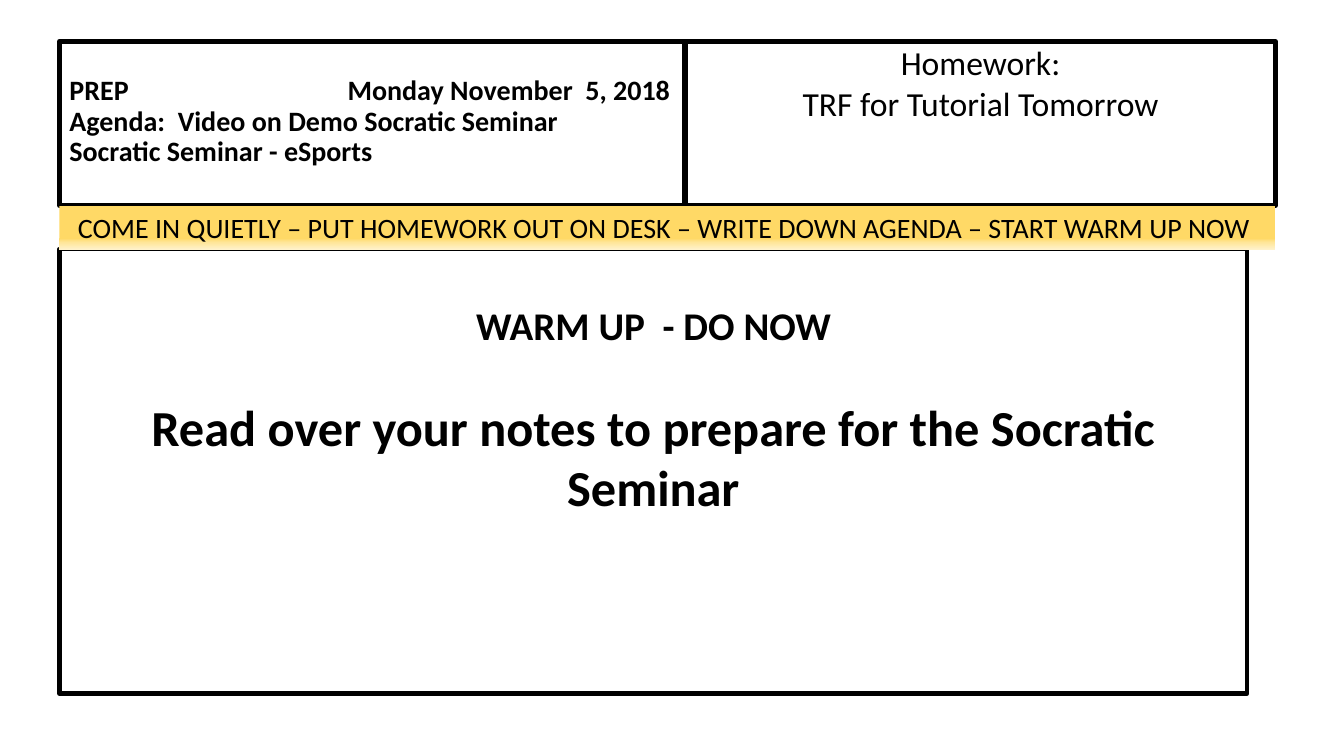
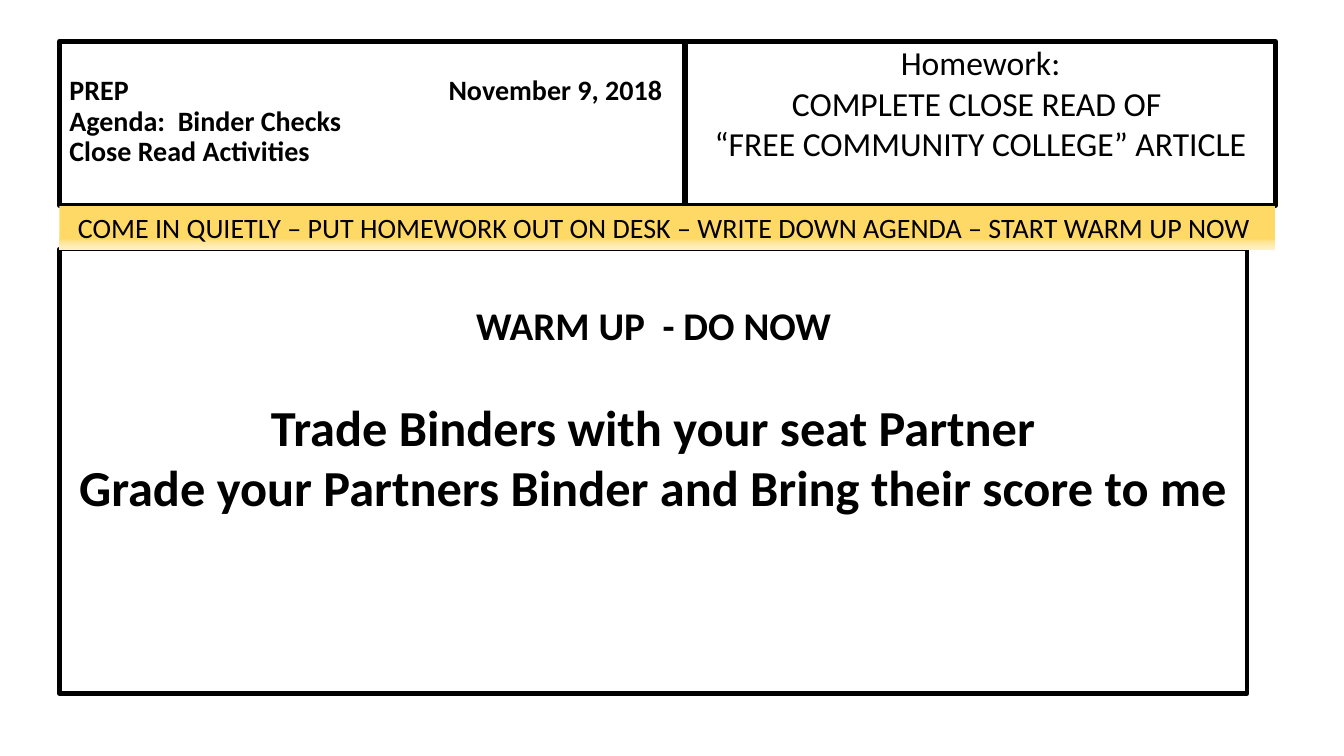
from lxml.etree import SubElement
from pptx import Presentation
from pptx.dml.color import RGBColor
from pptx.enum.shapes import MSO_SHAPE
from pptx.enum.text import MSO_ANCHOR, PP_ALIGN
from pptx.oxml.ns import qn
from pptx.util import Inches, Pt

FONT = "Calibri"
BLACK = RGBColor(0x00, 0x00, 0x00)
GOLD = RGBColor(0xFF, 0xD9, 0x66)
LIGHT_GOLD = RGBColor(0xFF, 0xE6, 0x99)
PALE_GOLD = RGBColor(0xFF, 0xF2, 0xCC)
BANNER_STOPS = [(0, GOLD), (74, GOLD), (83, LIGHT_GOLD), (100, PALE_GOLD)]

AGENDA_BOX = (0.59, 0.41, 6.2, 1.63)
HOMEWORK_BOX = (6.8, 0.41, 5.85, 1.63)
WARM_UP_BOX = (0.59, 2.47, 11.78, 4.41)
BANNER_BOX = (0.59, 2.04, 12.06, 0.44)

REMINDER = (
    "COME IN QUIETLY – PUT HOMEWORK OUT ON DESK – "
    "WRITE DOWN AGENDA – START WARM UP NOW "
)

DAYS = [
    {
        "date": "Monday November  5, 2018",
        "date_edge": 5.96,
        "agenda": ["Agenda:  Video on Demo Socratic Seminar", "Socratic Seminar - eSports"],
        "homework": ["TRF for Tutorial Tomorrow"],
        "tasks": ["Read over your notes to prepare for the Socratic Seminar"],
    },
    {
        "date": "November 9, 2018",
        "date_edge": 5.88,
        "agenda": ["Agenda:  Binder Checks", "Close Read Activities"],
        "homework": ["COMPLETE CLOSE READ OF ", "“FREE COMMUNITY COLLEGE” ARTICLE"],
        "tasks": [
            "Trade Binders with your seat Partner",
            "Grade your Partners Binder and Bring their score to me",
        ],
    },
]


def add_panel(slide, box, outlined=True, anchor=MSO_ANCHOR.TOP, top=0.05, bottom=0.05):
    panel = slide.shapes.add_shape(MSO_SHAPE.RECTANGLE, *map(Inches, box))
    panel.shadow.inherit = False
    panel.fill.background()
    if outlined:
        panel.line.color.rgb = BLACK
        panel.line.width = Pt(3.25)
    else:
        panel.line.fill.background()
    frame = panel.text_frame
    frame.word_wrap = True
    frame.vertical_anchor = anchor
    frame.margin_top, frame.margin_bottom = Inches(top), Inches(bottom)
    return panel


def write(panel, text, size=20, bold=False, align=PP_ALIGN.CENTER, spacing=1.0, before=0):
    frame = panel.text_frame
    paragraph = frame.paragraphs[0]
    if paragraph.runs:
        paragraph = frame.add_paragraph()
    paragraph.alignment = align
    paragraph.line_spacing = spacing
    paragraph.space_before = Pt(before)
    run = paragraph.add_run()
    run.text = text
    run.font.name = FONT
    run.font.size = Pt(size)
    run.font.bold = bold
    run.font.color.rgb = BLACK
    return paragraph


def add_right_tab(paragraph, position):
    tabs = SubElement(paragraph._p.get_or_add_pPr(), qn("a:tabLst"))
    SubElement(tabs, qn("a:tab"), pos=str(Inches(position)), algn="r")


def fill_gradient(panel, stops):
    panel.fill.gradient()
    panel.fill.gradient_angle = 270
    stop_list = panel._element.spPr.find(qn("a:gradFill")).find(qn("a:gsLst"))
    for default_stop in list(stop_list):
        stop_list.remove(default_stop)
    for percent, color in stops:
        stop = SubElement(stop_list, qn("a:gs"), pos=str(percent * 1000))
        SubElement(stop, qn("a:srgbClr"), val=str(color))


def add_agenda(slide, box, day):
    agenda = add_panel(slide, box, anchor=MSO_ANCHOR.BOTTOM, bottom=0.38)
    style = {"bold": True, "align": PP_ALIGN.LEFT, "spacing": 0.9}
    heading = write(agenda, f"PREP\t{day['date']}", **style)
    add_right_tab(heading, day["date_edge"])
    for item in day["agenda"]:
        write(agenda, item, **style)


def add_homework(slide, box, assignments):
    homework = add_panel(slide, box)
    write(homework, "Homework:", size=24, spacing=0.9)
    for assignment in assignments:
        write(homework, assignment, size=24)


def add_warm_up(slide, box, tasks):
    warm_up = add_panel(slide, box, top=0.52)
    write(warm_up, "WARM UP  - DO NOW", size=28, bold=True)
    for index, task in enumerate(tasks):
        write(warm_up, task, size=36, bold=True, before=0 if index else 34)


def add_banner(slide, box):
    banner = add_panel(slide, box, outlined=False)
    fill_gradient(banner, BANNER_STOPS)
    write(banner, REMINDER)


def add_day(deck, day):
    slide = deck.slides.add_slide(deck.slide_layouts[6])
    add_agenda(slide, AGENDA_BOX, day)
    add_homework(slide, HOMEWORK_BOX, day["homework"])
    add_warm_up(slide, WARM_UP_BOX, day["tasks"])
    add_banner(slide, BANNER_BOX)


def main():
    deck = Presentation()
    deck.slide_width, deck.slide_height = Inches(13.33), Inches(7.5)
    for day in DAYS:
        add_day(deck, day)
    deck.save("out.pptx")


if __name__ == "__main__":
    main()
